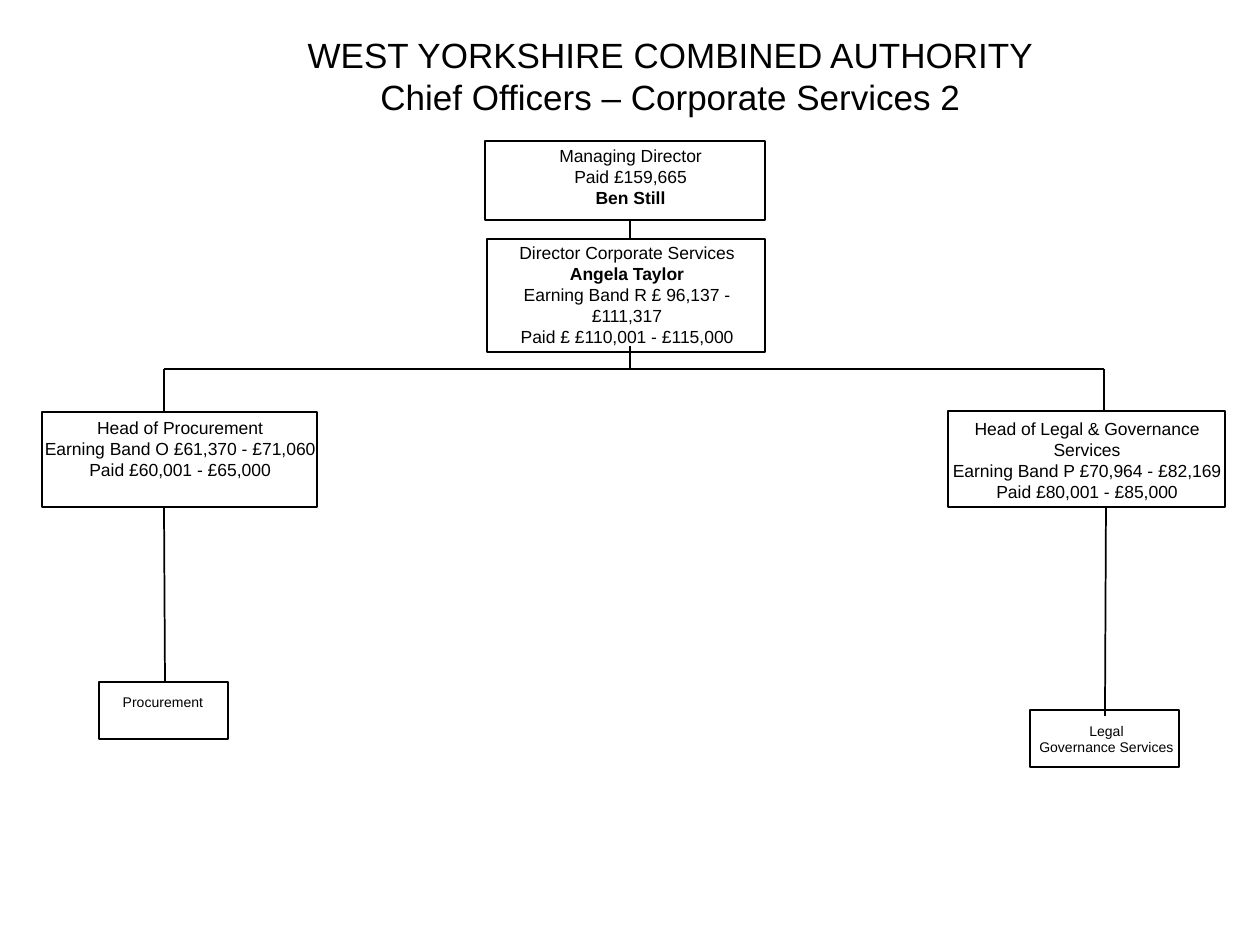
from dataclasses import dataclass

from lxml.etree import SubElement
from pptx import Presentation
from pptx.dml.color import RGBColor
from pptx.enum.shapes import MSO_CONNECTOR, MSO_SHAPE
from pptx.enum.text import MSO_ANCHOR, PP_ALIGN
from pptx.oxml.ns import qn
from pptx.util import Pt


@dataclass(frozen=True)
class Theme:
    """Colours, font and sizes of the chart."""
    ink: RGBColor = RGBColor(0, 0, 0)
    font: str = "Arial"
    title: int = 20
    post: int = 10
    team: int = 8
    line: int = 1


THEME = Theme()
SCALE = 914400 / 126

TITLE = ["WEST YORKSHIRE COMBINED AUTHORITY", "Chief Officers – Corporate Services 2"]
POSTS = [
    ((485, 141, 280, 79), (494, 139, 273, 93), THEME.post,
     ["Managing Director", "Paid £159,665", "*Ben Still"]),
    ((487, 239, 278, 113), (487, 236, 280, 134), THEME.post,
     ["Director Corporate Services", "*Angela Taylor",
      "Earning Band R £ 96,137 - £111,317", "Paid £ £110,001 - £115,000"]),
    ((42, 412, 275, 95), (31, 411, 298, 111), THEME.post,
     ["Head of Procurement", "Earning Band O £61,370 - £71,060",
      "Paid £60,001 - £65,000"]),
    ((948, 411, 277, 96), (928, 412, 318, 130), THEME.post,
     ["Head of Legal & Governance Services", "Earning Band P £70,964 - £82,169",
      "Paid £80,001 - £85,000"]),
    ((99, 682, 129, 57), (109, 687, 108, 30), THEME.team, ["Procurement"]),
    ((1030, 710, 149, 57), (997, 716, 219, 47), THEME.team,
     ["Legal", "Governance Services"]),
]
LINKS = [
    (630, 220, 630, 239),
    (630, 346, 630, 369),
    (164, 369, 1104, 369),
    (164, 369, 164, 412),
    (1104, 369, 1104, 411),
    (164, 508, 165, 682),
    (1106, 507, 1105, 716),
]


def px(*values):
    """Turn pixel lengths into EMU."""
    return [round(v * SCALE) for v in values]


def add_box(s, frame):
    """Draw an unfilled outlined rectangle."""
    sp = s.shapes.add_shape(MSO_SHAPE.RECTANGLE, *px(*frame))
    sp.shadow.inherit = False
    sp.fill.background()
    sp.line.color.rgb = THEME.ink
    sp.line.width = Pt(THEME.line)


def add_text(s, frame, lines, size, anchor=MSO_ANCHOR.TOP):
    """Add centred lines, with a leading star marking bold."""
    tf = s.shapes.add_textbox(*px(*frame)).text_frame
    tf.word_wrap = True
    tf.vertical_anchor = anchor
    for i, line in enumerate(lines):
        p = tf.add_paragraph() if i else tf.paragraphs[0]
        p.alignment = PP_ALIGN.CENTER
        r = p.add_run()
        r.text = line.lstrip("*")
        r.font.name = THEME.font
        r.font.size = Pt(size)
        r.font.bold = line.startswith("*")
        r.font.color.rgb = THEME.ink


def add_link(s, ends):
    """Draw a straight line without a shadow."""
    c = s.shapes.add_connector(MSO_CONNECTOR.STRAIGHT, *px(*ends))
    c.line.color.rgb = THEME.ink
    c.line.width = Pt(THEME.line)
    SubElement(c._element.spPr, qn("a:effectLst"))


def main():
    """Build the organisation chart."""
    prs = Presentation()
    prs.slide_width, prs.slide_height = px(1260, 945)
    s = prs.slides.add_slide(prs.slide_layouts[6])
    add_text(s, (135, 33, 1071, 86), TITLE, THEME.title, MSO_ANCHOR.MIDDLE)
    for box, frame, size, lines in POSTS:
        add_box(s, box)
        add_text(s, frame, lines, size)
    for ends in LINKS:
        add_link(s, ends)
    prs.save("out.pptx")


if __name__ == "__main__":
    main()
